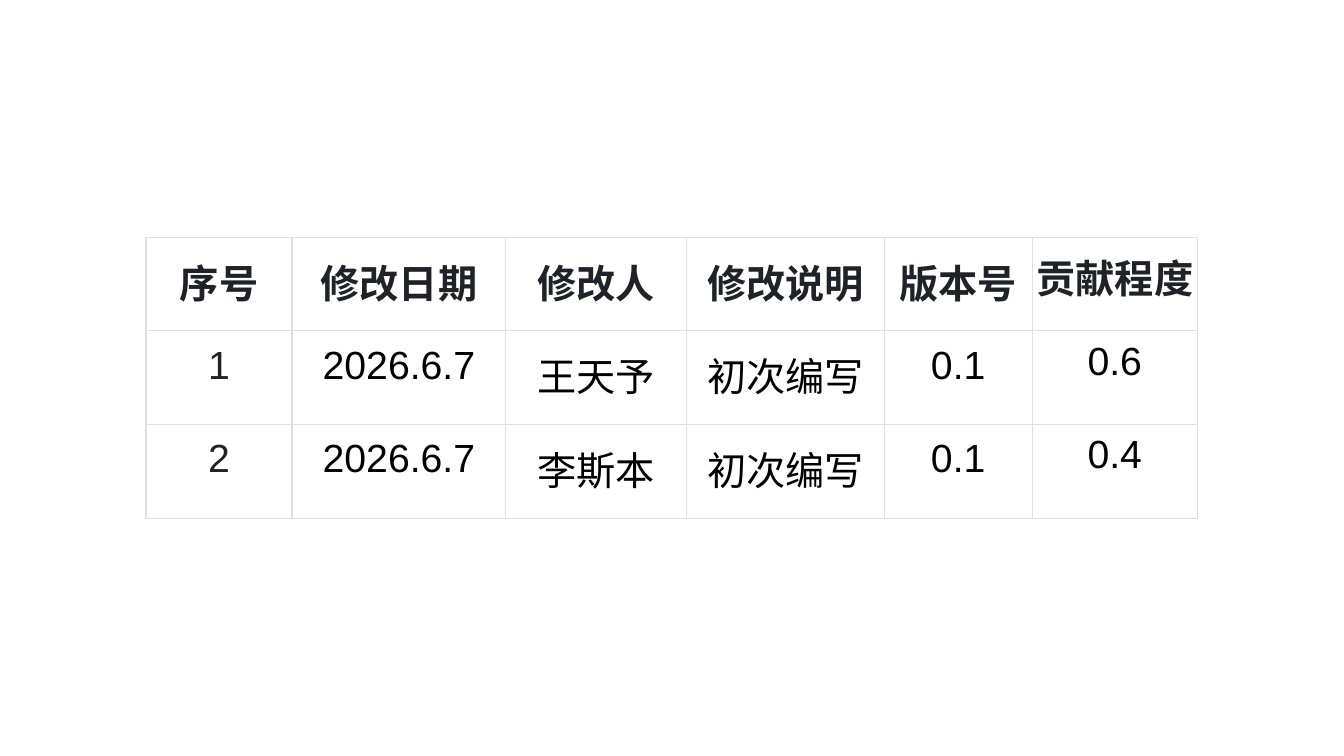
from dataclasses import dataclass

from lxml.etree import SubElement
from pptx import Presentation
from pptx.dml.color import RGBColor
from pptx.enum.text import PP_ALIGN
from pptx.oxml.ns import qn
from pptx.util import Cm, Pt


@dataclass(frozen=True)
class Theme:
    font: str = "Arial"
    size: int = 21
    ink: str = "1F2329"
    black: str = "000000"
    border: str = "DEE0E3"
    border_width: float = 0.75


theme = Theme()


def write(cell, text, color, bold=False):
    """Put one centred, formatted paragraph in a table cell."""
    para = cell.text_frame.paragraphs[0]
    para.alignment = PP_ALIGN.CENTER
    para.line_spacing = 1.2
    para.space_after = Pt(6)
    span = para.add_run()
    span.text = text
    span.font.name = theme.font
    span.font.size = Pt(theme.size)
    span.font.bold = bold
    span.font.color.rgb = RGBColor.from_string(color)


def draw_borders(cell):
    """Draw a thin line on all four sides; lines must precede the fill."""
    properties = cell._tc.get_or_add_tcPr()
    for side in ("a:lnL", "a:lnR", "a:lnT", "a:lnB"):
        line = SubElement(properties, qn(side), w=str(Pt(theme.border_width)))
        fill = SubElement(line, qn("a:solidFill"))
        SubElement(fill, qn("a:srgbClr"), val=theme.border)


# Page
deck = Presentation()
deck.slide_width, deck.slide_height = Cm(25.4), Cm(14.28)
page = deck.slides.add_slide(deck.slide_layouts[6])

# Revision history
rows = [
    ["序号", "修改日期", "修改人", "修改说明", "版本号", "贡献程度"],
    ["1", "2026.6.7", "王天予", "初次编写", "0.1", "0.6"],
    ["2", "2026.6.7", "李斯本", "初次编写", "0.1", "0.4"],
]
column_widths = [2.76, 4.04, 3.42, 3.73, 2.8, 3.12]
row_height = 1.77

# Table grid
frame = page.shapes.add_table(
    len(rows), len(column_widths), Cm(2.76), Cm(4.48),
    Cm(sum(column_widths)), Cm(row_height * len(rows)),
)
table = frame.table
table.horz_banding = False
for column, width in zip(table.columns, column_widths):
    column.width = Cm(width)
for row in table.rows:
    row.height = Cm(row_height)

# Cells: the last column has tighter margins
last_column = len(column_widths) - 1
for row_index, row in enumerate(rows):
    for column_index, text in enumerate(row):
        cell = table.cell(row_index, column_index)
        is_last = column_index == last_column
        cell.margin_left = cell.margin_right = Cm(0.03 if is_last else 0.15)
        cell.margin_top = Cm(0 if is_last else 0.08)
        cell.margin_bottom = Cm(0 if is_last else 0.05)
        draw_borders(cell)
        cell.fill.background()
        is_header = row_index == 0
        color = theme.ink if is_header or column_index == 0 else theme.black
        write(cell, text, color, bold=is_header)

deck.save("out.pptx")
